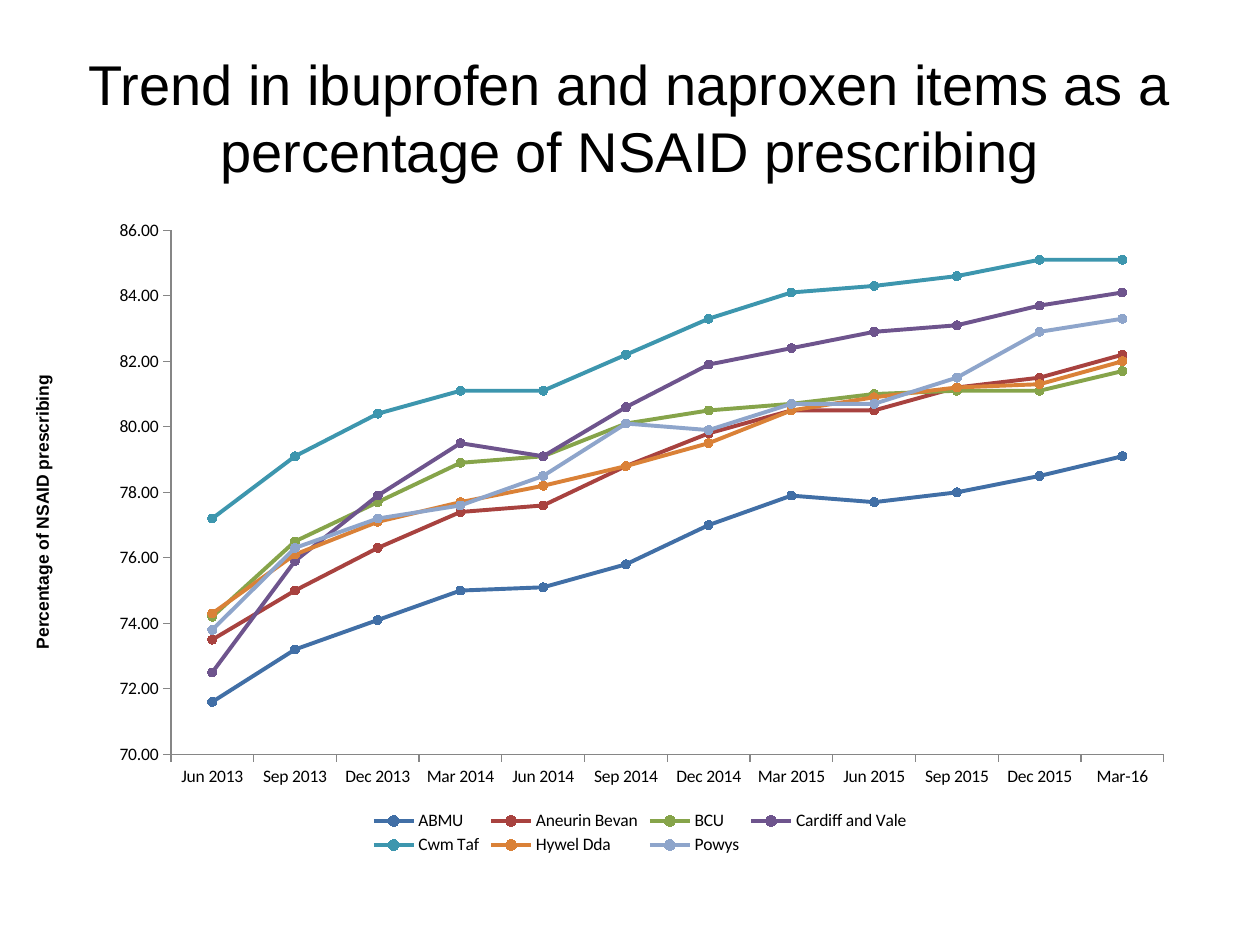
from lxml import etree
from pptx import Presentation
from pptx.chart.data import CategoryChartData
from pptx.dml.color import RGBColor
from pptx.enum.chart import (XL_CHART_TYPE as ChartType, XL_LEGEND_POSITION as LegendPosition,
                             XL_MARKER_STYLE as MarkerStyle, XL_TICK_MARK as TickMark)
from pptx.enum.text import MSO_ANCHOR as Anchor, PP_ALIGN as Align
from pptx.oxml.ns import qn
from pptx.util import Inches, Pt

MONTHS = ["Jun 2013", "Sep 2013", "Dec 2013", "Mar 2014", "Jun 2014", "Sep 2014",
          "Dec 2014", "Mar 2015", "Jun 2015", "Sep 2015", "Dec 2015", "Mar-16"]

# Health board: line colour, percentages by month
BOARDS = {
    "ABMU": ("416FA6", [71.6, 73.2, 74.1, 75, 75.1, 75.8, 77, 77.9, 77.7, 78, 78.5, 79.1]),
    "Aneurin Bevan": ("A8423F", [73.5, 75, 76.3, 77.4, 77.6, 78.8, 79.8, 80.5, 80.5, 81.2, 81.5, 82.2]),
    "BCU": ("86A44A", [74.2, 76.5, 77.7, 78.9, 79.1, 80.1, 80.5, 80.7, 81, 81.1, 81.1, 81.7]),
    "Cardiff and Vale": ("6E548D", [72.5, 75.9, 77.9, 79.5, 79.1, 80.6, 81.9, 82.4, 82.9, 83.1, 83.7, 84.1]),
    "Cwm Taf": ("3D96AE", [77.2, 79.1, 80.4, 81.1, 81.1, 82.2, 83.3, 84.1, 84.3, 84.6, 85.1, 85.1]),
    "Hywel Dda": ("DA8137", [74.3, 76.1, 77.1, 77.7, 78.2, 78.8, 79.5, 80.5, 80.9, 81.2, 81.3, 82]),
    "Powys": ("8EA5CB", [73.8, 76.3, 77.2, 77.6, 78.5, 80.1, 79.9, 80.7, 80.7, 81.5, 82.9, 83.3]),
}


def color(hex_string):
    return RGBColor.from_string(hex_string)


def format_font(font, size, name="Arial", fill="000000", bold=False):
    font.size, font.name, font.bold = Pt(size), name, bold
    font.color.rgb = color(fill)


def write_text(shape, text, anchor=Anchor.MIDDLE, align=Align.CENTER, **font_format):
    frame = shape.text_frame
    frame.word_wrap = True
    frame.vertical_anchor = anchor
    paragraph = frame.paragraphs[0]
    paragraph.alignment = align
    run = paragraph.add_run()
    run.text = text
    format_font(run.font, **font_format)


def add_title(slide, left, top, width, height):
    title = slide.shapes.title
    title.left, title.top, title.width, title.height = left, top, width, height
    write_text(title, "Trend in ibuprofen and naproxen items as a percentage of NSAID prescribing",
               size=32)


def make_layout(x, y, w, h, inner=False):
    """Manual chart layout, in fractions of the chart's size."""
    layout = etree.Element(qn("c:layout"))
    manual = etree.SubElement(layout, qn("c:manualLayout"))
    values = {"layoutTarget": "inner"} if inner else {}
    values.update(xMode="edge", yMode="edge", x=x, y=y, w=w, h=h)
    for tag, value in values.items():
        etree.SubElement(manual, qn(f"c:{tag}")).set("val", str(value))
    return layout


def style_axis(axis):
    axis.has_major_gridlines = False
    axis.major_tick_mark = TickMark.OUTSIDE
    axis.minor_tick_mark = TickMark.NONE
    axis.format.line.color.rgb = color("868686")
    axis.format.line.width = Pt(0.75)
    format_font(axis.tick_labels.font, 10, "Calibri")


def style_series(series, line_color):
    series.smooth = False
    series.format.line.color.rgb = color(line_color)
    series.format.line.width = Pt(2.25)
    marker = series.marker
    marker.style, marker.size = MarkerStyle.CIRCLE, 5
    marker.format.fill.solid()
    marker.format.fill.fore_color.rgb = color(line_color)
    marker.format.line.color.rgb = color(line_color)


def add_trend_chart(slide, left, top, width, height):
    data = CategoryChartData(number_format="#,##0.00")
    data.categories = MONTHS
    for name, (_, values) in BOARDS.items():
        data.add_series(name, values)
    chart = slide.shapes.add_chart(ChartType.LINE_MARKERS, left, top, width, height, data).chart
    chart.has_title = False
    format_font(chart.font, 10, "Calibri")
    plot = chart.plots[0]
    plot.vary_by_categories = False
    for series in plot.series:
        style_series(series, BOARDS[series.name][0])

    # Axes
    style_axis(chart.category_axis)
    value_axis = chart.value_axis
    style_axis(value_axis)
    value_axis.minimum_scale, value_axis.maximum_scale, value_axis.major_unit = 70, 86, 2
    value_axis.tick_labels.number_format = "#,##0.00"
    value_axis.tick_labels.number_format_is_linked = False

    # Legend in two rows under the plot
    chart.has_legend = True
    legend = chart.legend
    legend.position = LegendPosition.BOTTOM
    legend.include_in_layout = False
    format_font(legend.font, 10, "Calibri")

    # Places of plot and legend
    plot_area = chart.element.find(".//" + qn("c:plotArea"))
    legend_element = chart.element.find(".//" + qn("c:legend"))
    for parent in (plot_area, legend_element):
        for old_layout in parent.findall(qn("c:layout")):
            parent.remove(old_layout)
    plot_area.insert(0, make_layout(0.07, 0.04, 0.91, 0.8, inner=True))
    legend_element.find(qn("c:legendPos")).addnext(make_layout(0.25, 0.92, 0.5, 0.08))


def add_axis_caption(slide, left, top, width, height):
    caption = slide.shapes.add_textbox(left, top, width, height)
    write_text(caption, "Percentage of NSAID prescribing", anchor=Anchor.TOP, size=10, bold=True)
    caption.element.find(".//" + qn("a:bodyPr")).set("vert", "vert270")


def main():
    presentation = Presentation()
    presentation.slide_width, presentation.slide_height = Inches(10), Inches(7.5)
    slide = presentation.slides.add_slide(presentation.slide_layouts[5])
    add_title(slide, Inches(0.5), Inches(0.3), Inches(9), Inches(1.25))
    add_trend_chart(slide, Inches(0.75), Inches(1.62), Inches(8.66), Inches(5.2))
    add_axis_caption(slide, Inches(0.2), Inches(1.78), Inches(0.37), Inches(4.57))
    presentation.save("out.pptx")


if __name__ == "__main__":
    main()
